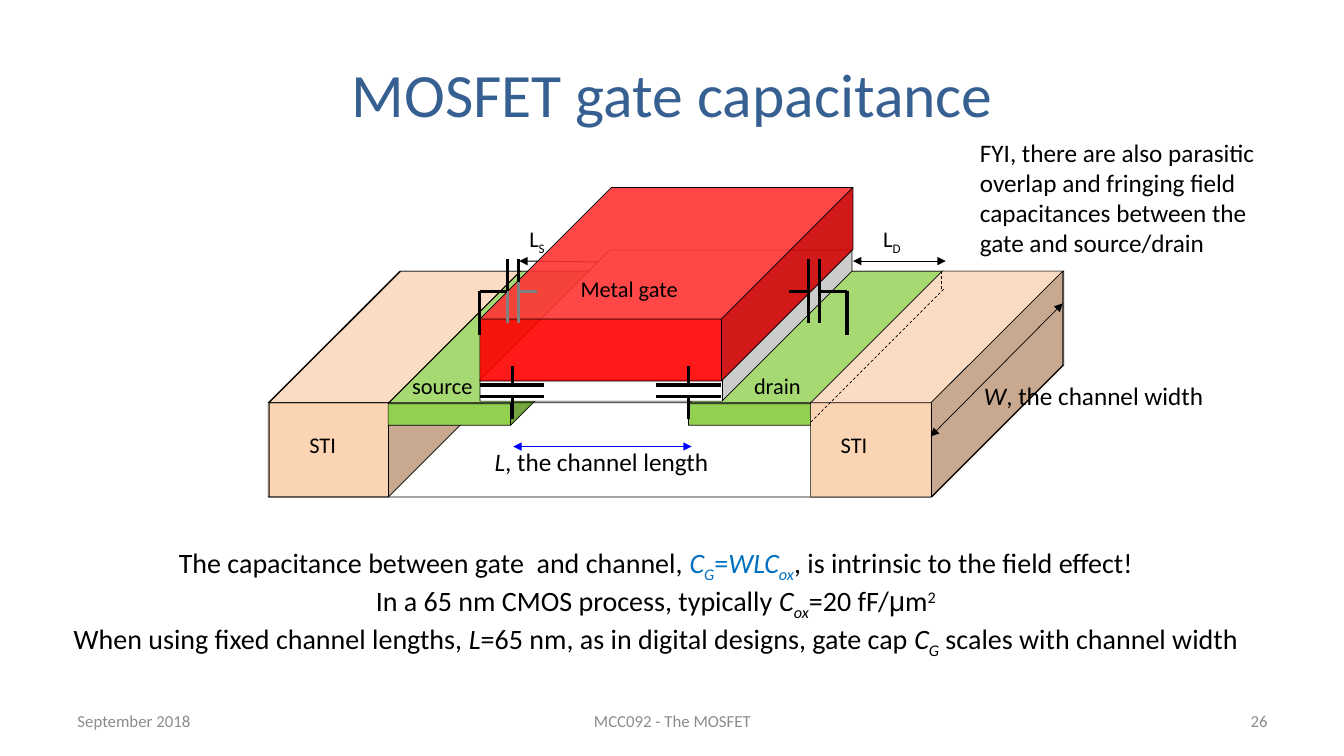
from dataclasses import dataclass
from typing import Optional

from lxml.etree import SubElement
from pptx import Presentation
from pptx.dml.color import RGBColor
from pptx.enum.dml import MSO_LINE_DASH_STYLE as Dash
from pptx.enum.shapes import MSO_CONNECTOR_TYPE as Connector, MSO_SHAPE as Shape
from pptx.enum.text import MSO_ANCHOR as Anchor, PP_ALIGN as Align
from pptx.oxml.ns import qn
from pptx.util import Inches, Pt

COLORS = {
    "black": "000000", "white": "FFFFFF", "title": "376092", "footer": "8C8C8C",
    "sti": "FBD4B4", "diffusion": "92D050", "gate": "FF0000", "length": "0000FF",
    "formula": "0070C0", "hidden": "808080",
}


@dataclass(frozen=True)
class Cube:
    left: float
    top: float
    width: float
    height: float
    depth: float
    fill: Optional[str] = None
    opacity: int = 100


@dataclass(frozen=True)
class Line:
    x1: float
    y1: float
    x2: float
    y2: float
    width: float = 2.25
    color: str = "black"
    arrows: bool = False
    dashed: bool = False


@dataclass(frozen=True)
class Piece:
    text: str
    italic: bool = False
    baseline: int = 0
    color: Optional[str] = None
    font: str = "Calibri"


@dataclass(frozen=True)
class Label:
    left: float
    top: float
    width: float
    height: float
    paragraphs: list[list[Piece]]
    size: int = 16
    align: Align = Align.LEFT
    color: str = "black"
    anchor: Anchor = Anchor.TOP
    side_inset: float = 0.1


def rgb(name: str) -> RGBColor:
    return RGBColor.from_string(COLORS[name])


def symbol(letter: str, index: str, color: Optional[str] = None) -> list[Piece]:
    return [Piece(letter, True, 0, color), Piece(index, True, -25, color)]


def draw_cube(slide, cube: Cube) -> None:
    shape = slide.shapes.add_shape(Shape.CUBE, Inches(cube.left), Inches(cube.top),
                                   Inches(cube.width), Inches(cube.height))
    shape.adjustments[0] = cube.depth
    shape.shadow.inherit = False
    shape.line.color.rgb = rgb("black")
    shape.line.width = Pt(0.5)
    if cube.fill is None:
        shape.fill.background()
        return
    shape.fill.solid()
    shape.fill.fore_color.rgb = rgb(cube.fill)
    if cube.opacity < 100:
        color = shape._element.spPr.find(qn("a:solidFill"))[0]
        SubElement(color, qn("a:alpha"), val=str(cube.opacity * 1000))


def draw_line(slide, line: Line) -> None:
    connector = slide.shapes.add_connector(Connector.STRAIGHT, Inches(line.x1), Inches(line.y1),
                                           Inches(line.x2), Inches(line.y2))
    connector.line.color.rgb = rgb(line.color)
    connector.line.width = Pt(line.width)
    if line.dashed:
        connector.line.dash_style = Dash.DASH
    properties = connector._element.spPr
    if line.arrows:
        for end in ("a:headEnd", "a:tailEnd"):
            SubElement(properties.find(qn("a:ln")), qn(end), type="triangle")
    SubElement(properties, qn("a:effectLst"))


def write_paragraph(paragraph, pieces: list[Piece], size: int, color: str, align: Align) -> None:
    paragraph.alignment = align
    for piece in pieces:
        run = paragraph.add_run()
        run.text = piece.text
        run.font.name = piece.font
        run.font.size = Pt(size)
        run.font.italic = piece.italic
        run.font.color.rgb = rgb(piece.color or color)
        if piece.baseline:
            run._r.get_or_add_rPr().set("baseline", str(piece.baseline * 1000))


def draw_label(slide, label: Label) -> None:
    box = slide.shapes.add_textbox(Inches(label.left), Inches(label.top),
                                   Inches(label.width), Inches(label.height))
    frame = box.text_frame
    frame.word_wrap = True
    frame.vertical_anchor = label.anchor
    frame.margin_left = frame.margin_right = Inches(label.side_inset)
    for index, pieces in enumerate(label.paragraphs):
        paragraph = frame.add_paragraph() if index else frame.paragraphs[0]
        write_paragraph(paragraph, pieces, label.size, label.color, label.align)


def draw_title(slide, text: str) -> None:
    title = slide.shapes.title
    title.left, title.top = Inches(2.17), Inches(0.3)
    title.width, title.height = Inches(9), Inches(1.25)
    title.text_frame.vertical_anchor = Anchor.MIDDLE
    write_paragraph(title.text_frame.paragraphs[0], [Piece(text)], 44, "title", Align.CENTER)


def channel_capacitor(center: float) -> list[Line]:
    plates = [Line(center - 0.32, y, center + 0.32, y) for y in (3.82, 3.93)]
    leads = [Line(center, top, center, bottom) for top, bottom in ((3.63, 3.82), (3.93, 4.16))]
    return plates + leads


def overlap_capacitor(inner: float, direction: int, inner_color: str) -> list[Line]:
    outer, end = inner + 0.11 * direction, inner + 0.38 * direction
    return [
        Line(inner, 2.57, inner, 3.2, color=inner_color),
        Line(outer, 2.57, outer, 3.2, color=inner_color),
        Line(inner, 2.57, inner, 2.8),
        Line(outer, 2.57, outer, 2.89),
        Line(inner - 0.19 * direction, 2.89, inner, 2.89, color=inner_color),
        Line(outer, 2.89, end, 2.89),
        Line(end, 2.89, end, 3.32),
    ]


SOURCE_OVERLAP = Line(5.15, 2.59, 6.07, 2.6, 0.75, arrows=True)
CUBES = [
    Cube(2.66, 2.69, 2.5, 2.24, 0.583, "sti"),
    Cube(3.85, 2.69, 2.53, 1.53, 0.86, "diffusion"),
    Cube(6.83, 2.69, 2.53, 1.53, 0.86, "diffusion"),
    Cube(2.67, 2.69, 7.88, 2.24, 0.583),
    Cube(4.76, 2.48, 3.69, 1.5, 0.86, "white"),
    Cube(8.04, 2.69, 2.5, 2.24, 0.583, "sti"),
    Cube(4.76, 1.86, 3.7, 1.92, 0.68, "gate", 90),
]
DIMENSIONS = [
    Line(8.46, 2.59, 9.38, 2.59, 0.75, arrows=True),
    Line(10.54, 3.01, 9.23, 4.33, 0.5, arrows=True),
    Line(9.36, 2.87, 8.04, 4.19, 0.5, dashed=True),
    Line(9.34, 2.69, 9.34, 2.87, 0.5, dashed=True),
    Line(6.86, 4.43, 5.09, 4.43, 1, "length", arrows=True),
]
CAPACITORS = [
    *channel_capacitor(5.08), *channel_capacitor(6.83),
    *overlap_capacitor(5.14, -1, "hidden"), *overlap_capacitor(8.02, 1, "black"),
]
SUMMARY = [
    [Piece("The capacitance between gate  and channel, "), *symbol("C", "G", "formula"),
     Piece("=", color="formula"), *symbol("WLC", "ox", "formula"),
     Piece(", is intrinsic to the field effect!")],
    [Piece("In a 65 nm CMOS process, typically "), *symbol("C", "ox"), Piece("=20 fF/"),
     Piece("μ", font="Arial"), Piece("m"), Piece("2", baseline=30)],
    [Piece("When using fixed channel lengths, "), Piece("L", True),
     Piece("=65 nm, as in digital designs, gate cap "), *symbol("C", "G"),
     Piece(" scales with channel width")],
]
NOTE = ("FYI, there are also parasitic overlap and fringing field capacitances "
        "between the gate and source/drain")
LABELS = [
    Label(2.97, 4.23, 1.02, 0.66, [[Piece("STI")]]),
    Label(8.24, 4.23, 1.38, 0.66, [[Piece("STI")]]),
    Label(5.66, 2.68, 1.78, 0.67, [[Piece("Metal gate")]]),
    Label(7.38, 3.64, 1.38, 0.66, [[Piece("drain")]]),
    Label(3.99, 3.64, 1.38, 0.66, [[Piece("source")]]),
    Label(8.76, 2.18, 0.63, 0.66, [[Piece("L"), Piece("D", baseline=-30)]], side_inset=0),
    Label(5.25, 2.18, 0.63, 0.66, [[Piece("L"), Piece("S", baseline=-30)]], side_inset=0),
    Label(9.66, 3.72, 2.75, 0.66, [[Piece("W", True), Piece(", the channel width")]], 18),
    Label(4.54, 4.38, 2.85, 0.44, [[Piece("L", True), Piece(", the channel length")]], 18,
          Align.CENTER),
    Label(9.62, 1.31, 3.11, 1.3, [[Piece(NOTE)]], 18),
    Label(0.52, 5.36, 11.97, 1.46, SUMMARY, 20, Align.CENTER),
]
FOOTERS = [
    Label(left, 6.95, width, 0.4, [[Piece(text)]], 12, align, "footer", Anchor.MIDDLE)
    for left, width, text, align in (
        (0.67, 3.11, "September 2018", Align.LEFT),
        (4.56, 4.22, "MCC092 - The MOSFET", Align.CENTER),
        (9.56, 3.11, "26", Align.RIGHT),
    )
]


def main() -> None:
    presentation = Presentation()
    presentation.slide_width, presentation.slide_height = Inches(13.33), Inches(7.5)
    slide = presentation.slides.add_slide(presentation.slide_layouts[5])
    draw_title(slide, "MOSFET gate capacitance")
    draw_line(slide, SOURCE_OVERLAP)
    for cube in CUBES:
        draw_cube(slide, cube)
    for line in DIMENSIONS + CAPACITORS:
        draw_line(slide, line)
    for label in LABELS + FOOTERS:
        draw_label(slide, label)
    presentation.save("out.pptx")


if __name__ == "__main__":
    main()
